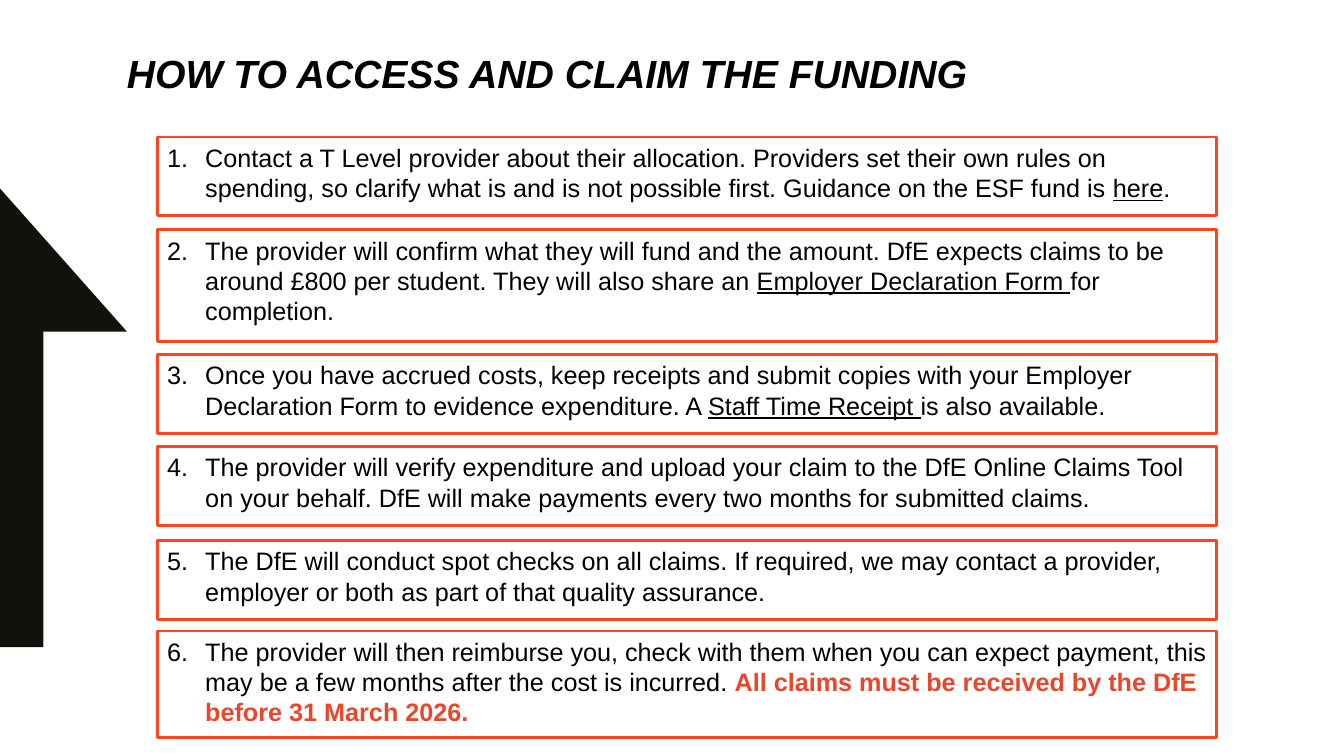
from pptx import Presentation
from pptx import util as u
from pptx.dml.color import RGBColor
from pptx.enum import shapes, text
from pptx.oxml import ns
from lxml import etree

LEFT, WIDTH, INDENT = 112.3, 756.7, 27.2
# top, height, runs as (wording, format values)
STEPS = [
    (97.9, 56.2, [
        ("Contact a T Level provider about their allocation. Providers set their own rules on "
         "spending, so clarify what is and is not possible first. Guidance on the ESF fund is ", {}),
        ("here", {"underline": True}),
        (".", {})]),
    (164.2, 79.9, [
        ("The provider will confirm what they will fund and the amount. DfE expects claims to be "
         "around £800 per student. They will also share an ", {}),
        ("Employer Declaration Form ", {"underline": True}),
        ("for completion.", {})]),
    (253.4, 56.2, [
        ("Once you have accrued costs, keep receipts and submit copies with your Employer "
         "Declaration Form to evidence expenditure. A ", {}),
        ("Staff Time Receipt ", {"underline": True}),
        ("is also available.", {})]),
    (319, 56.2, [
        ("The provider will verify expenditure and upload your claim to the DfE Online Claims Tool "
         "on your behalf. DfE will make payments every two months for submitted claims.", {})]),
    (386.3, 56.2, [
        ("The DfE will conduct spot checks on all claims. If required, we may contact a provider, "
         "employer or both as part of that quality assurance.", {})]),
    (450.7, 76.3, [
        ("The provider will then reimburse you, check with them when you can expect payment, "
         "this may be a few months after the cost is incurred. ", {}),
        ("All claims must be received by the DfE before 31 March 2026.",
         {"bold": True, "color": "E8472B"})]),
]
ARROW = [(0, 134.6), (90.7, 236.9), (31, 236.9), (31, 462.2), (0, 462.2)]


def rgb(value):
    return RGBColor.from_string(value)


class SlideBuilder:
    font = "Arial"
    ink = "000000"
    paper = "FFFFFF"
    accent = "FC4420"
    arrow = "12110C"

    def __init__(self, slide):
        self.slide = slide

    def add_span(self, para, wording, size, color=None, **values):
        span = para.add_run()
        span.text = wording
        for name, value in {"name": self.font, "size": u.Pt(size), **values}.items():
            setattr(span.font, name, value)
        span.font.color.rgb = rgb(color or self.ink)

    def title(self, wording, left, top, width, height):
        box = self.slide.shapes.add_textbox(u.Pt(left), u.Pt(top), u.Pt(width), u.Pt(height))
        frame = box.text_frame
        frame.word_wrap = True
        for side in ("left", "top", "right", "bottom"):
            setattr(frame, f"margin_{side}", 0)
        para = frame.paragraphs[0]
        para.line_spacing = 0.8
        self.add_span(para, wording, 28, bold=True, italic=True)

    def outline(self, points):
        """Fill a closed polygon without an outline."""
        corners = [(u.Pt(x), u.Pt(y)) for x, y in points]
        builder = self.slide.shapes.build_freeform(*corners[0])
        builder.add_line_segments(corners[1:], close=True)
        polygon = builder.convert_to_shape()
        polygon.shadow.inherit = False
        polygon.fill.solid()
        polygon.fill.fore_color.rgb = rgb(self.arrow)
        polygon.line.fill.background()

    def step(self, number, top, height, runs):
        """Add a framed paragraph that carries its step number."""
        box = self.slide.shapes.add_shape(
            shapes.MSO_SHAPE.RECTANGLE, u.Pt(LEFT), u.Pt(top), u.Pt(WIDTH), u.Pt(height))
        box.shadow.inherit = False
        box.fill.solid()
        box.fill.fore_color.rgb = rgb(self.paper)
        box.line.color.rgb = rgb(self.accent)
        box.line.width = u.Pt(2)
        frame = box.text_frame
        frame.word_wrap = True
        frame.vertical_anchor = text.MSO_ANCHOR.TOP
        para = frame.paragraphs[0]
        para.alignment = text.PP_ALIGN.LEFT
        para.space_after = u.Pt(6)
        self.number(para, number)
        for wording, values in runs:
            self.add_span(para, wording, 18, **values)

    def number(self, para, start):
        props = para._p.get_or_add_pPr()
        props.set("marL", str(u.Pt(INDENT)))
        props.set("indent", str(-u.Pt(INDENT)))
        etree.SubElement(props, ns.qn("a:buFont"), typeface=self.font)
        etree.SubElement(props, ns.qn("a:buAutoNum"), type="arabicPeriod", startAt=str(start))


def main():
    deck = Presentation()
    deck.slide_width, deck.slide_height = u.Pt(960), u.Pt(540)
    page = SlideBuilder(deck.slides.add_slide(deck.slide_layouts[6]))
    page.outline(ARROW)
    page.title("HOW TO ACCESS AND CLAIM THE FUNDING", 90.7, 41.8, 770.4, 39.6)
    for number, (top, height, runs) in enumerate(STEPS, start=1):
        page.step(number, top, height, runs)
    deck.save("out.pptx")


if __name__ == "__main__":
    main()
